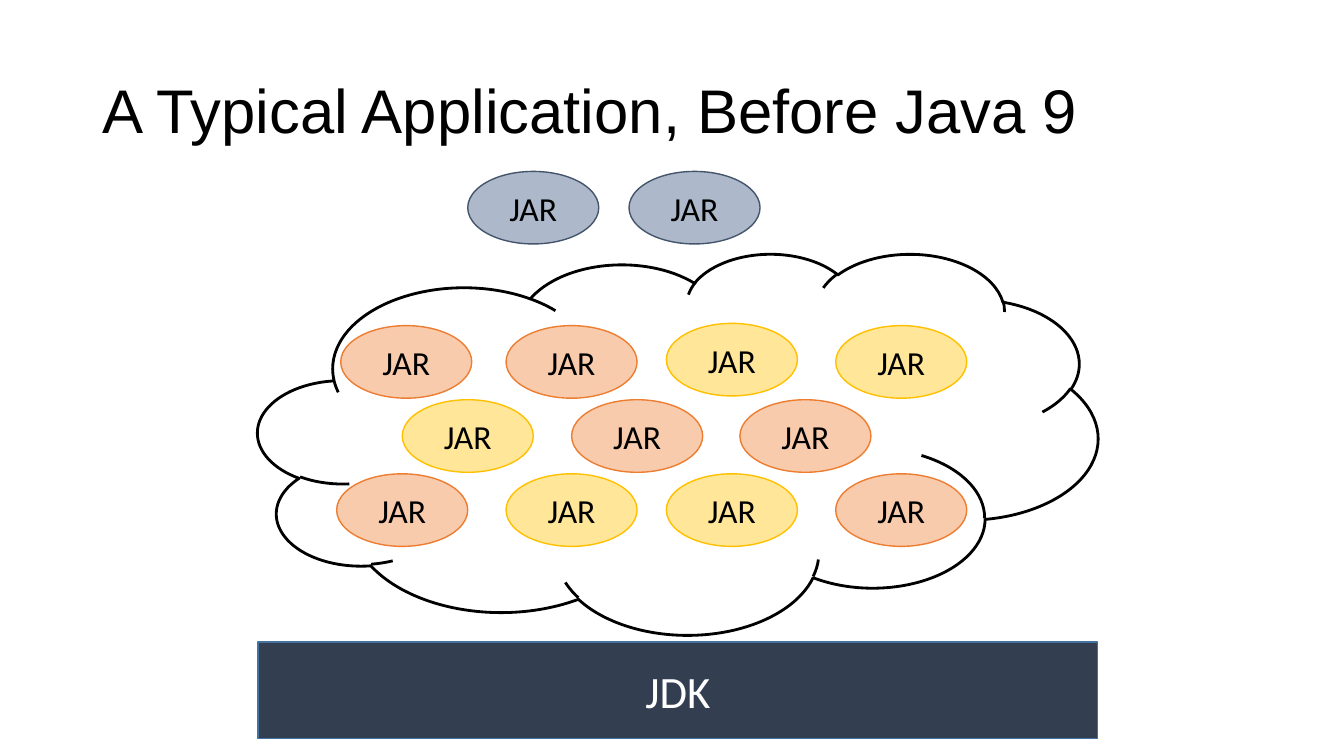
from dataclasses import dataclass

from pptx import Presentation
from pptx.dml.color import RGBColor
from pptx.enum.shapes import MSO_SHAPE
from pptx.enum.text import MSO_ANCHOR, PP_ALIGN
from pptx.util import Inches, Pt


@dataclass(frozen=True)
class Theme:
    title_font: str = "Arial"
    body_font: str = "Calibri"
    title_size: int = 44
    jdk_size: int = 32
    jar_size: int = 24
    ink: str = "000000"
    paper: str = "FFFFFF"
    # Fill and line of each kind of box
    jdk: tuple = ("333F50", "43739E")
    orange: tuple = ("F8CBAD", "ED7D31")
    yellow: tuple = ("FFE699", "FFC000")
    blue: tuple = ("ADB9CA", "44546A")


def apply_format(target, values):
    for attribute, value in values.items():
        setattr(target, attribute, value)


class SlideBuilder:
    """Places elements by percent of the slide's width and height."""

    def __init__(self, deck, theme):
        self.deck = deck
        self.theme = theme
        self.slide = deck.slides.add_slide(deck.slide_layouts[6])

    def area(self, left, top, width, height):
        across, down = self.deck.slide_width / 100, self.deck.slide_height / 100
        return (round(left * across), round(top * down),
                round(width * across), round(height * down))

    def set_text(self, shape, text, font, size, color, align, spacing=1.0):
        frame = shape.text_frame
        apply_format(frame, {"word_wrap": True,
                             "vertical_anchor": MSO_ANCHOR.MIDDLE})
        paragraph = frame.paragraphs[0]
        apply_format(paragraph, {"alignment": align, "line_spacing": spacing})
        run = paragraph.add_run()
        run.text = text
        apply_format(run.font, {"name": font, "size": Pt(size)})
        run.font.color.rgb = RGBColor.from_string(color)

    def title(self, text, *place):
        box = self.slide.shapes.add_textbox(*self.area(*place))
        self.set_text(box, text, self.theme.title_font, self.theme.title_size,
                      self.theme.ink, PP_ALIGN.LEFT, 0.9)

    def outline(self, preset, place, line, weight, fill=None):
        shape = self.slide.shapes.add_shape(preset, *self.area(*place))
        shape.shadow.inherit = False
        if fill:
            shape.fill.solid()
            shape.fill.fore_color.rgb = RGBColor.from_string(fill)
        else:
            shape.fill.background()
        shape.line.color.rgb = RGBColor.from_string(line)
        shape.line.width = Pt(weight)
        return shape

    def labelled(self, preset, place, text, colors, size, ink):
        fill, line = colors
        shape = self.outline(preset, place, line, 1, fill)
        self.set_text(shape, text, self.theme.body_font, size, ink,
                      PP_ALIGN.CENTER)

    def jar(self, left, top, colors):
        self.labelled(MSO_SHAPE.OVAL, (left, top, 9.75, 9.6), "JAR", colors,
                      self.theme.jar_size, self.theme.ink)


def main():
    deck = Presentation()
    deck.slide_width, deck.slide_height = Inches(13.33), Inches(7.5)
    theme = Theme()
    page = SlideBuilder(deck, theme)

    page.title("A Typical Application, Before Java 9", 6.9, 5.33, 86.25, 19.33)

    # The JDK below the application
    stack_left, stack_width = 19.2, 62.48
    page.labelled(MSO_SHAPE.RECTANGLE, (stack_left, 84.93, stack_width, 12.8),
                  "JDK", theme.jdk, theme.jdk_size, theme.paper)

    # Application JARs: row number, left edge, colours
    first_row, row_step = 43.07, 9.8
    application_jars = [
        (0, 25.35, theme.orange), (0, 37.65, theme.orange),
        (-0.03, 49.58, theme.yellow), (0, 62.18, theme.yellow),
        (1, 29.93, theme.yellow), (1, 42.53, theme.orange),
        (1, 55.05, theme.orange),
        (2, 25.05, theme.orange), (2, 37.65, theme.yellow),
        (2, 49.58, theme.yellow), (2, 62.18, theme.orange),
    ]
    for row, left, colors in application_jars:
        page.jar(left, first_row + row * row_step, colors)

    # The cloud around the application
    page.outline(MSO_SHAPE.CLOUD, (stack_left, 33.47, stack_width, 50.4),
                 theme.ink, 2)

    # JARs outside the cloud
    for left in (34.8, 46.8):
        page.jar(left, 22.67, theme.blue)

    deck.save("out.pptx")


if __name__ == "__main__":
    main()
